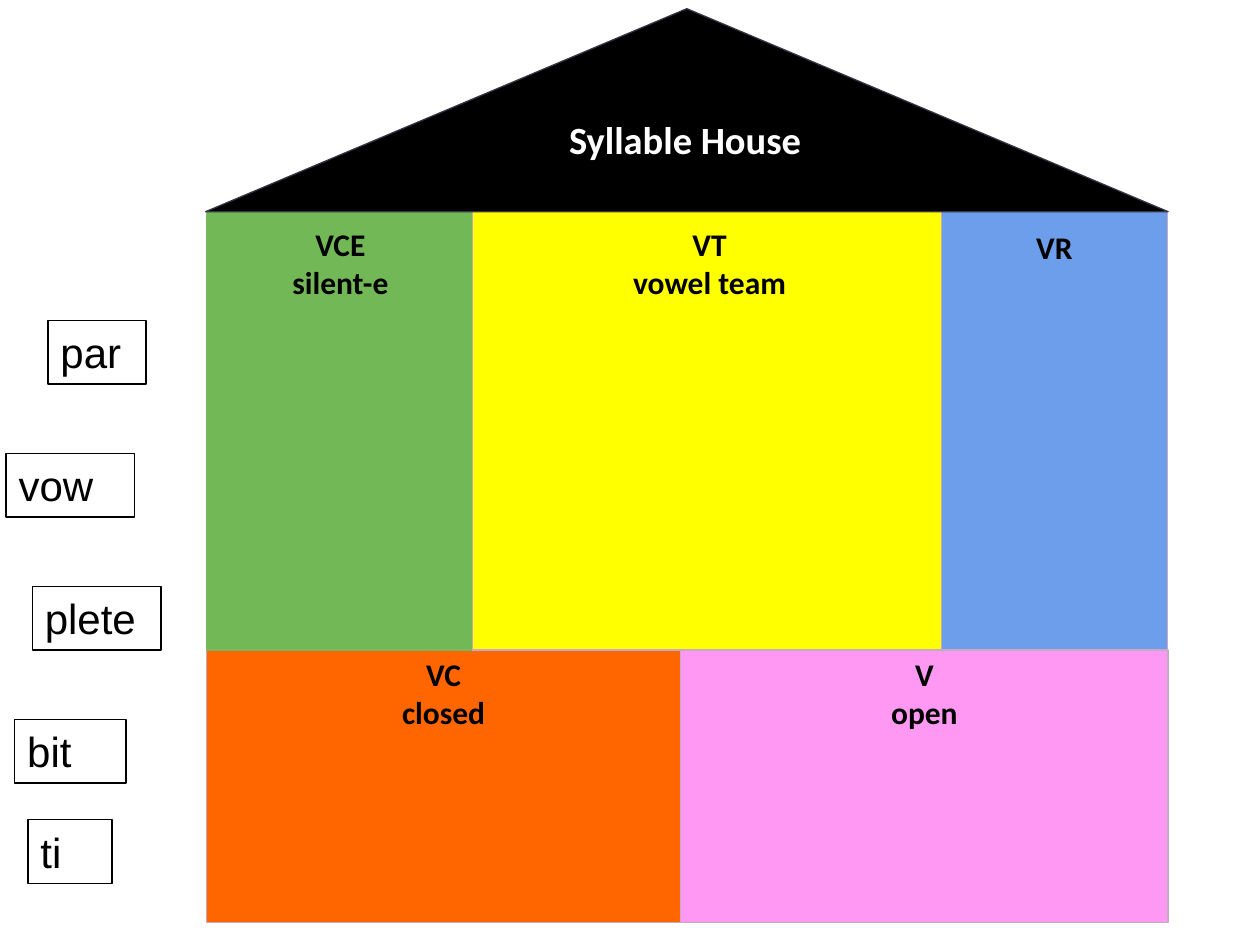
from dataclasses import dataclass

from pptx import Presentation
from pptx.dml.color import RGBColor
from pptx.enum.shapes import MSO_SHAPE
from pptx.enum.text import MSO_ANCHOR, MSO_AUTO_SIZE, PP_ALIGN
from pptx.util import Pt

RECT, TRIANGLE = MSO_SHAPE.RECTANGLE, MSO_SHAPE.ISOSCELES_TRIANGLE
LEFT, CENTER = PP_ALIGN.LEFT, PP_ALIGN.CENTER
TOP = MSO_ANCHOR.TOP
GROW = MSO_AUTO_SIZE.SHAPE_TO_FIT_TEXT
TITLE_ONLY = 5


@dataclass(frozen=True)
class Theme:
    heading_font: str = "Calibri"
    word_font: str = "Arial"
    title_size: float = 22
    room_size: float = 18
    word_size: float = 24
    black: str = "000000"
    white: str = "FFFFFF"
    roof_line: str = "373545"
    room_line: str = "C6AAC5"
    green_line: str = "7EB85E"
    green: str = "73B856"
    yellow: str = "FFFF00"
    blue: str = "6D9EEB"
    orange: str = "FF6600"
    pink: str = "FF98F2"


THEME = Theme()


@dataclass(frozen=True)
class Room:
    label: str
    left: float
    width: float
    fill: str
    inset: float
    line: str = THEME.room_line


@dataclass(frozen=True)
class Floor:
    top: float
    height: float
    rooms: tuple[Room, ...]


@dataclass(frozen=True)
class WordCard:
    word: str
    left: float
    top: float
    width: float


HOUSE_LEFT = 118
ROOF_TOP, ROOF_WIDTH, ROOF_HEIGHT = 5, 550, 116
UPPER_TOP, UPPER_HEIGHT = ROOF_TOP + ROOF_HEIGHT, 250.5
LOWER_TOP, LOWER_HEIGHT = UPPER_TOP + UPPER_HEIGHT, 155.5
CARD_HEIGHT = 36.5

FLOORS = (
    Floor(LOWER_TOP, LOWER_HEIGHT, (
        Room("V\nopen", 389, 278.5, THEME.pink, 2.8),
        Room("VC\nclosed", HOUSE_LEFT, 271, THEME.orange, 2.8),
    )),
    Floor(UPPER_TOP, UPPER_HEIGHT, (
        Room("VCE\nsilent-e", HOUSE_LEFT, 153, THEME.green, 7.5, THEME.green_line),
        Room("VT\nvowel team", 270, 271, THEME.yellow, 7.5),
        Room("VR", 538, 129, THEME.blue, 9.5),
    )),
)

CARDS = (
    WordCard("ti", 16, 468.5, 48),
    WordCard("bit", 8.5, 411, 63.5),
    WordCard("plete", 18.5, 335, 73.5),
    WordCard("vow", 3.5, 259, 73.5),
    WordCard("par", 27.5, 183, 56),
)


def write(tf, text: str, *, font: str, size: float, color: str,
          bold: bool = False, align=LEFT, inset_x: float = 7.2,
          inset_y: float = 3.6) -> None:
    """Fill a text frame from the top, one paragraph per line of text."""
    tf.word_wrap = True
    tf.vertical_anchor = TOP
    tf.margin_left = tf.margin_right = Pt(inset_x)
    tf.margin_top = tf.margin_bottom = Pt(inset_y)
    for i, line in enumerate(text.split("\n")):
        p = tf.add_paragraph() if i else tf.paragraphs[0]
        p.alignment = align
        r = p.add_run()
        r.text = line
        r.font.name = font
        r.font.size = Pt(size)
        r.font.bold = bold
        r.font.color.rgb = RGBColor.from_string(color)


def add_box(s, kind, left: float, top: float, width: float, height: float,
            fill: str, line: str):
    sp = s.shapes.add_shape(kind, Pt(left), Pt(top), Pt(width), Pt(height))
    sp.shadow.inherit = False
    sp.fill.solid()
    sp.fill.fore_color.rgb = RGBColor.from_string(fill)
    sp.line.color.rgb = RGBColor.from_string(line)
    sp.line.width = Pt(0.75)
    return sp


def add_room(s, room: Room, floor: Floor) -> None:
    sp = add_box(s, RECT, room.left, floor.top, room.width, floor.height,
                 room.fill, room.line)
    write(sp.text_frame, room.label, font=THEME.heading_font,
          size=THEME.room_size, color=THEME.black, bold=True, align=CENTER,
          inset_y=room.inset)


def add_card(s, card: WordCard) -> None:
    sp = add_box(s, RECT, card.left, card.top, card.width, CARD_HEIGHT,
                 THEME.white, THEME.black)
    write(sp.text_frame, card.word, font=THEME.word_font,
          size=THEME.word_size, color=THEME.black)


def add_roof(s) -> None:
    """Draw the roof and bring the slide title in front of it."""
    add_box(s, TRIANGLE, HOUSE_LEFT - 0.5, ROOF_TOP, ROOF_WIDTH, ROOF_HEIGHT,
            THEME.black, THEME.roof_line)
    title = s.shapes.title
    title.left, title.top = Pt(318), Pt(59)
    title.width, title.height = Pt(153.5), Pt(41)
    write(title.text_frame, "Syllable House", font=THEME.heading_font,
          size=THEME.title_size, color=THEME.white, bold=True, inset_y=7.2)
    title.text_frame.auto_size = GROW
    title.element.getparent().append(title.element)


def main() -> None:
    prs = Presentation()
    prs.slide_width, prs.slide_height = Pt(720), Pt(540)
    s = prs.slides.add_slide(prs.slide_layouts[TITLE_ONLY])
    for floor in FLOORS:
        for room in floor.rooms:
            add_room(s, room, floor)
    for card in CARDS:
        add_card(s, card)
    add_roof(s)
    prs.save("out.pptx")


if __name__ == "__main__":
    main()
